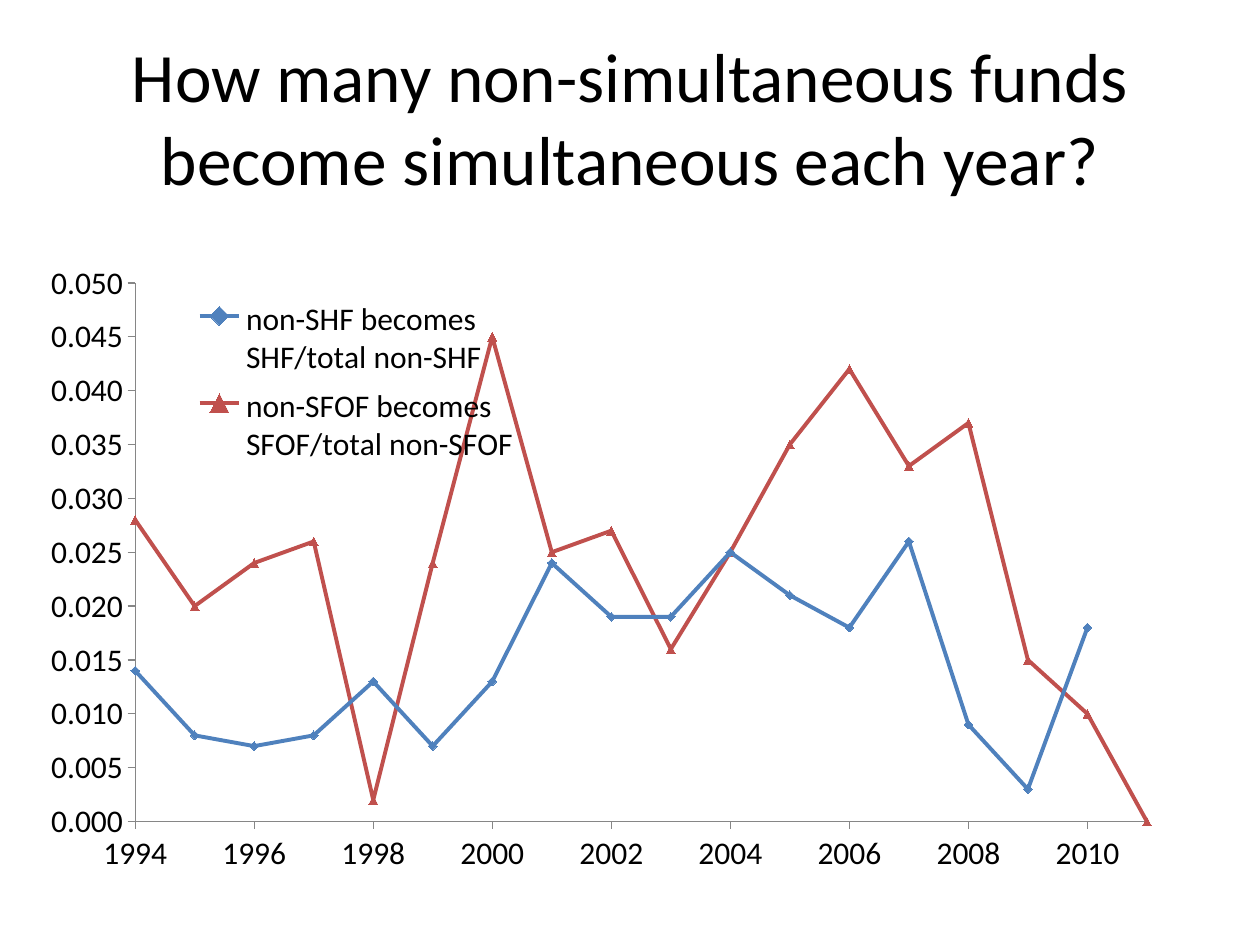
import lxml.etree
import pptx
import pptx.chart.data
import pptx.dml.color
import pptx.enum.chart
import pptx.enum.text
import pptx.oxml.ns
import pptx.util
from pptx.util import Cm, Pt

BLACK = pptx.dml.color.RGBColor(0x00, 0x00, 0x00)
GRAY = pptx.dml.color.RGBColor(0x86, 0x86, 0x86)
BLUE = pptx.dml.color.RGBColor(0x4F, 0x81, 0xBD)
RED = pptx.dml.color.RGBColor(0xC0, 0x50, 0x4D)
FONT = "Calibri"


def add_text(slide, text, left, top, width, height, size, color=BLACK):
    box = slide.shapes.add_textbox(left, top, width, height)
    frame = box.text_frame
    frame.word_wrap = True
    frame.vertical_anchor = pptx.enum.text.MSO_ANCHOR.MIDDLE
    paragraph = frame.paragraphs[0]
    paragraph.alignment = pptx.enum.text.PP_ALIGN.CENTER
    run = paragraph.add_run()
    run.text = text
    run.font.name = FONT
    run.font.size = size
    run.font.color.rgb = color


def set_layout(parent, position, target=None, **fractions):
    """Place a chart part by fractions of the chart's width and height."""
    qn = pptx.oxml.ns.qn
    for old_layout in parent.findall(qn("c:layout")):
        parent.remove(old_layout)
    layout = lxml.etree.Element(qn("c:layout"))
    parent.insert(position, layout)
    manual = lxml.etree.SubElement(layout, qn("c:manualLayout"))
    settings = {"layoutTarget": target} if target else {}
    settings.update(xMode="edge", yMode="edge", **fractions)
    for name, value in settings.items():
        lxml.etree.SubElement(manual, qn(f"c:{name}"), val=str(value))


presentation = pptx.Presentation()
presentation.slide_width = Cm(25.4)
presentation.slide_height = Cm(19.05)
slide = presentation.slides.add_slide(presentation.slide_layouts[6])

add_text(
    slide,
    "How many non-simultaneous funds become simultaneous each year?",
    left=Cm(1.27), top=Cm(0.76), width=Cm(22.86), height=Cm(3.18), size=Pt(39.6),
)

# Conversion rates by year; the first series has no value for the last year
FIRST_YEAR, LAST_YEAR = 1994, 2011
MARKERS = pptx.enum.chart.XL_MARKER_STYLE
rates = [
    ("non-SHF becomes SHF/total non-SHF", BLUE, MARKERS.DIAMOND,
     [0.014, 0.008, 0.007, 0.008, 0.013, 0.007, 0.013, 0.024, 0.019,
      0.019, 0.025, 0.021, 0.018, 0.026, 0.009, 0.003, 0.018, None]),
    ("non-SFOF becomes SFOF/total non-SFOF", RED, MARKERS.TRIANGLE,
     [0.028, 0.02, 0.024, 0.026, 0.002, 0.024, 0.045, 0.025, 0.027,
      0.016, 0.025, 0.035, 0.042, 0.033, 0.037, 0.015, 0.01, 0]),
]
chart_data = pptx.chart.data.XyChartData()
for name, color, marker, values in rates:
    series_data = chart_data.add_series(name)
    for year, value in enumerate(values, FIRST_YEAR):
        series_data.add_data_point(year, value)

chart = slide.shapes.add_chart(
    pptx.enum.chart.XL_CHART_TYPE.XY_SCATTER_LINES,
    Cm(1.03), Cm(5.08), Cm(23.5), Cm(12.5), chart_data,
).chart
chart.has_title = False
chart.font.name = FONT
chart.font.size = Pt(18)
chart.font.color.rgb = BLACK
chart.plots[0].vary_by_categories = False

# A missing value is a gap: its point is left out of the series
plot_area = chart.plots[0]._element.getparent()
for point in list(plot_area.iter(pptx.oxml.ns.qn("c:pt"))):
    if point.findtext(pptx.oxml.ns.qn("c:v")) in ("None", "", None):
        point.getparent().remove(point)

for series, (name, color, marker, values) in zip(chart.plots[0].series, rates):
    series.smooth = False
    series.format.line.color.rgb = color
    series.format.line.width = Pt(2.25)
    series.marker.style = marker
    series.marker.size = 5
    series.marker.format.fill.solid()
    series.marker.format.fill.fore_color.rgb = color
    series.marker.format.line.color.rgb = color

axes = [
    (chart.category_axis, FIRST_YEAR, LAST_YEAR, 2, "0"),
    (chart.value_axis, 0, 0.05, 0.005, "0.000"),
]
for axis, minimum, maximum, step, number_format in axes:
    axis.minimum_scale = minimum
    axis.maximum_scale = maximum
    axis.major_unit = step
    axis.has_major_gridlines = False
    axis.major_tick_mark = pptx.enum.chart.XL_TICK_MARK.OUTSIDE
    axis.minor_tick_mark = pptx.enum.chart.XL_TICK_MARK.NONE
    axis.tick_labels.number_format = number_format
    axis.tick_labels.number_format_is_linked = False
    axis.format.line.color.rgb = GRAY
    axis.format.line.width = Pt(0.75)

chart.has_legend = True
chart.legend.position = pptx.enum.chart.XL_LEGEND_POSITION.RIGHT
chart.legend.include_in_layout = False
set_layout(plot_area, 0, target="inner", x=0.07, y=0.05, w=0.87, h=0.87)
set_layout(chart.legend._element, 1, x=0.11, y=0.06, w=0.3, h=0.3)

presentation.save("out.pptx")
